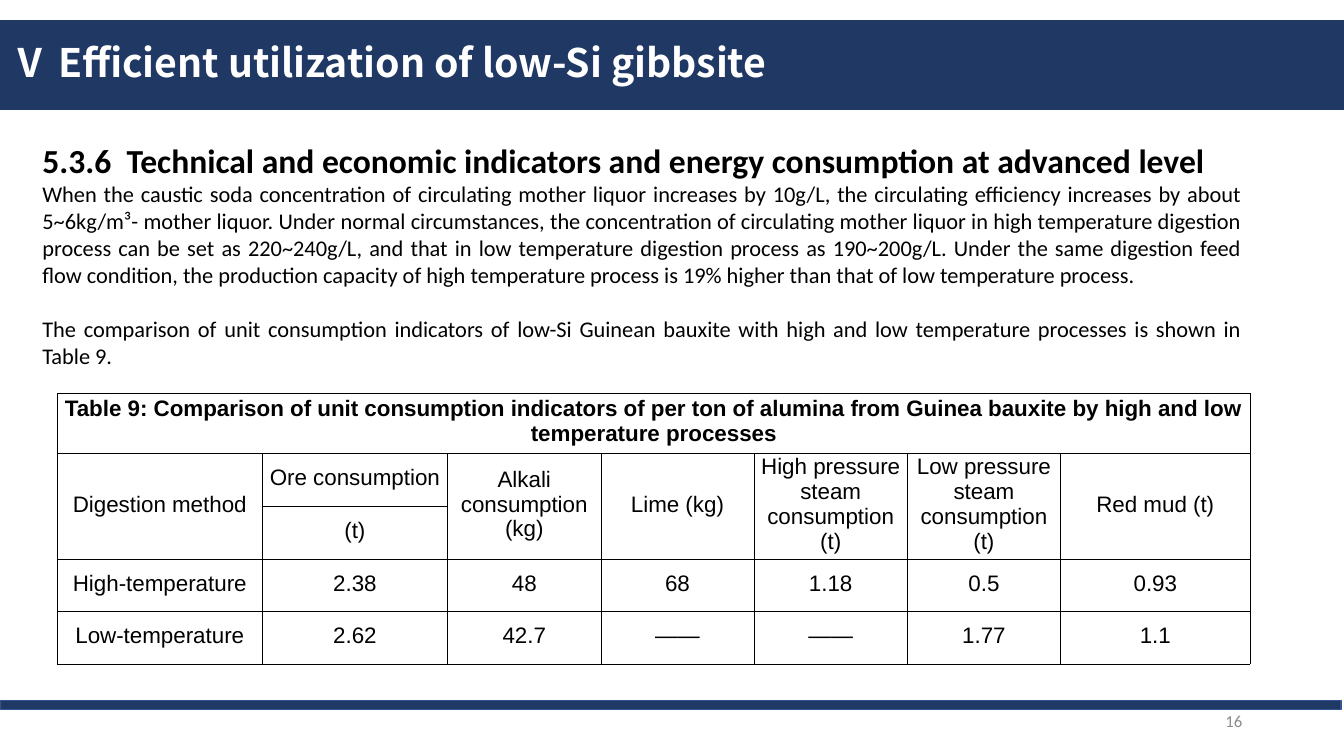
import pptx
import pptx.dml.color
import pptx.enum.shapes
import pptx.enum.text
import pptx.oxml
import pptx.oxml.ns
import pptx.util

Inches, Pt = pptx.util.Inches, pptx.util.Pt
ALIGN = pptx.enum.text.PP_ALIGN
MIDDLE = pptx.enum.text.MSO_ANCHOR.MIDDLE

COLORS = {"navy": "203864", "edge": "325491", "white": "FFFFFF",
          "black": "000000", "gray": "8C8C8C"}
HEADING = "5.3.6  Technical and economic indicators and energy consumption at advanced level"
BODY = (
    "When the caustic soda concentration of circulating mother liquor increases by 10g/L, "
    "the circulating efficiency increases by about 5~6kg/m³- mother liquor. Under normal "
    "circumstances, the concentration of circulating mother liquor in high temperature "
    "digestion process can be set as 220~240g/L, and that in low temperature digestion "
    "process as 190~200g/L. Under the same digestion feed flow condition, the production "
    "capacity of high temperature process is 19% higher than that of low temperature process.",
    "The comparison of unit consumption indicators of low-Si Guinean bauxite with high and "
    "low temperature processes is shown in Table 9.",
)
CAPTION = ("Table 9: Comparison of unit consumption indicators of per ton of alumina "
           "from Guinea bauxite by high and low temperature processes")
ROWS = [
    [CAPTION],
    ["Digestion method", "Ore consumption", "Alkali consumption (kg)", "Lime (kg)",
     "High pressure steam consumption (t)", "Low pressure steam consumption (t)",
     "Red mud (t)"],
    ["", "(t)"],
    ["High-temperature", "2.38", "48", "68", "1.18", "0.5", "0.93"],
    ["Low-temperature", "2.62", "42.7", "——", "——", "1.77", "1.1"],
]
COLUMN_WIDTHS = [2.03, 1.84, 1.52, 1.52, 1.52, 1.52, 1.88]
ROW_HEIGHTS = [0.6] + [0.52] * 4
ORE_COLUMN = 1


def rgb(name):
    return pptx.dml.color.RGBColor.from_string(COLORS[name])


def place(shape, box):
    shape.left, shape.top, shape.width, shape.height = map(Inches, box)


def write(para, text, size, font="Calibri", color="black", bold=False, align=ALIGN.LEFT):
    para.alignment = align
    span = para.add_run()
    span.text = text
    span.font.size, span.font.name, span.font.bold = Pt(size), font, bold
    span.font.color.rgb = rgb(color)
    properties = span.font._element
    east_asian = pptx.oxml.parse_xml(
        f'<a:ea {pptx.oxml.ns.nsdecls("a")} typeface="{font}"/>')
    properties.find(pptx.oxml.ns.qn("a:latin")).addnext(east_asian)


def add_bar(page, box, edge=None):
    """Add a navy bar behind the placeholders."""
    bar = page.shapes.add_shape(pptx.enum.shapes.MSO_SHAPE.RECTANGLE, *map(Inches, box))
    bar.shadow.inherit = False
    bar.fill.solid()
    bar.fill.fore_color.rgb = rgb("navy")
    if edge:
        bar.line.color.rgb = rgb(edge)
        bar.line.width = Pt(1)
    else:
        bar.line.fill.background()
    page.shapes.element.insert(2, bar.element)


def fill_title(page, box):
    place(page.shapes.title, box)
    frame = page.shapes.title.text_frame
    frame.vertical_anchor = MIDDLE
    para = frame.paragraphs[0]
    para.line_spacing = 0.9
    write(para, "Ⅴ Efficient utilization of low-Si gibbsite", 28,
          "Noto Sans CJK SC", "white", True)


def fill_body(page, box):
    body = page.placeholders[1]
    place(body, box)
    frame = body.text_frame
    frame.word_wrap = True
    frame.auto_size = pptx.enum.text.MSO_AUTO_SIZE.NONE
    paras = [frame.paragraphs[0]] + [frame.add_paragraph() for _ in BODY]
    for para, gap in zip(paras, (0, 0, 19.5)):
        properties = para._p.get_or_add_pPr()
        properties.set("marL", "0")
        properties.set("indent", "0")
        properties.append(pptx.oxml.parse_xml(
            f'<a:buNone {pptx.oxml.ns.nsdecls("a")}/>'))
        para.space_before, para.space_after = Pt(gap), Pt(0)
        para.line_spacing = 1.0
    paras[0].line_spacing = 1.5
    write(paras[0], HEADING, 24, bold=True)
    for para, text in zip(paras[1:], BODY):
        write(para, text, 16, align=ALIGN.JUSTIFY)


def format_cell(cell):
    cell.margin_left = cell.margin_top = cell.margin_right = Inches(0.01)
    cell.margin_bottom = Inches(0.05)
    cell.vertical_anchor = MIDDLE
    for side in "LRTB":
        cell._tc.get_or_add_tcPr().append(pptx.oxml.parse_xml(
            f'<a:ln{side} {pptx.oxml.ns.nsdecls("a")} w="{Pt(0.5)}"><a:solidFill>'
            f'<a:srgbClr val="{COLORS["black"]}"/></a:solidFill></a:ln{side}>'))
    cell.fill.background()


def add_consumption_table(page, box):
    table = page.shapes.add_table(len(ROWS), len(COLUMN_WIDTHS), *map(Inches, box)).table
    table.first_row = table.horz_banding = False
    for column, width in zip(table.columns, COLUMN_WIDTHS):
        column.width = Inches(width)
    for row, height in zip(table.rows, ROW_HEIGHTS):
        row.height = Inches(height)
    for cell in table.iter_cells():
        format_cell(cell)
    last = len(COLUMN_WIDTHS) - 1
    table.cell(0, 0).merge(table.cell(0, last))
    for c in range(last + 1):
        if c != ORE_COLUMN:
            table.cell(1, c).merge(table.cell(2, c))
    for r, texts in enumerate(ROWS):
        for c, text in enumerate(texts):
            if text:
                write(table.cell(r, c).text_frame.paragraphs[0], text, 16, "Arial",
                      bold=r == 0, align=ALIGN.CENTER)


def add_page_number(page, box):
    frame = page.shapes.add_textbox(*map(Inches, box)).text_frame
    frame.word_wrap = True
    frame.vertical_anchor = MIDDLE
    write(frame.paragraphs[0], "16", 12, color="gray", align=ALIGN.RIGHT)


def main():
    deck = pptx.Presentation()
    deck.slide_width, deck.slide_height = Inches(13.33), Inches(7.5)
    page = deck.slides.add_slide(deck.slide_layouts[1])
    add_bar(page, (0, 0.2, 13.33, 0.89))
    add_bar(page, (0, 6.95, 13.3, 0.09), "edge")
    fill_title(page, (0, -0.08, 11.5, 1.45))
    fill_body(page, (0.32, 1.14, 12.1, 2.59))
    add_consumption_table(page, (0.57, 3.9, sum(COLUMN_WIDTHS), sum(ROW_HEIGHTS)))
    add_page_number(page, (9.42, 6.95, 3, 0.4))
    deck.save("out.pptx")


if __name__ == "__main__":
    main()
